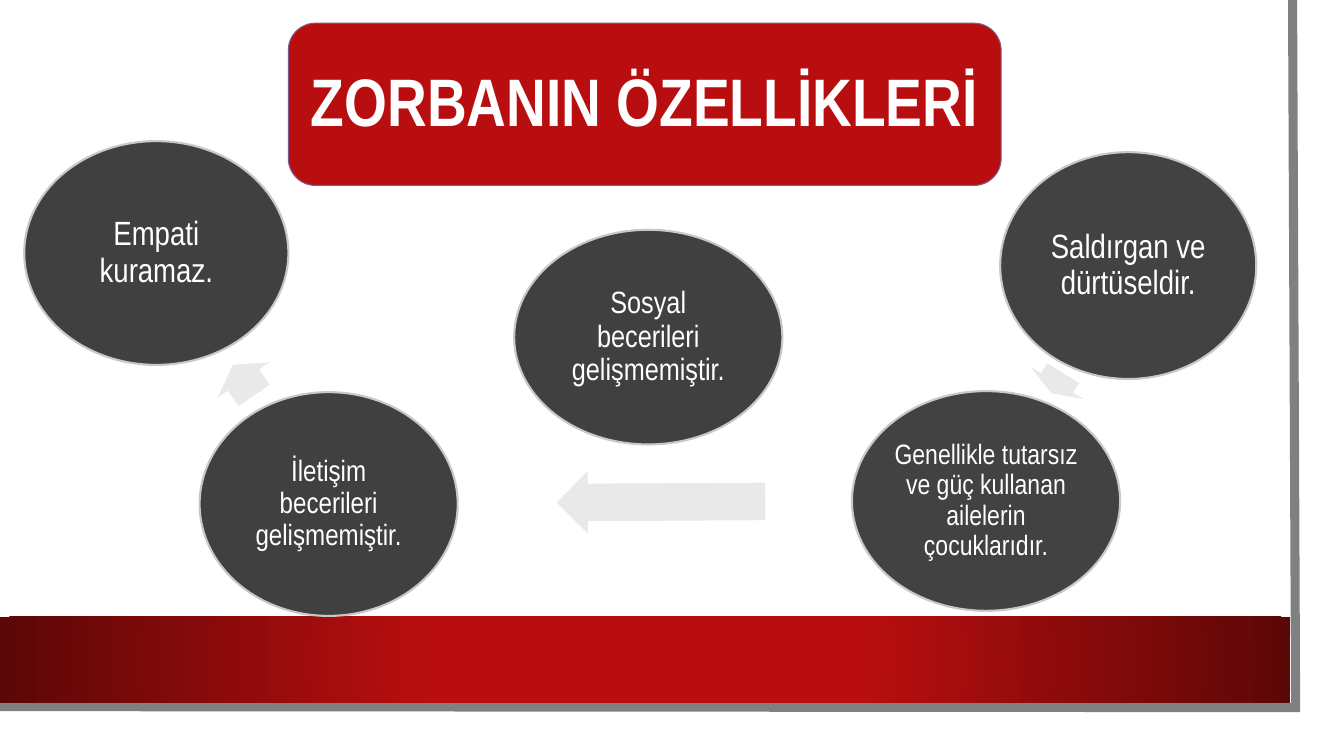
import pptx
import pptx.dml.color
import pptx.enum.shapes
import pptx.enum.text
import pptx.oxml
import pptx.oxml.ns
import pptx.util

Inches = pptx.util.Inches
Pt = pptx.util.Pt
SHAPE = pptx.enum.shapes.MSO_SHAPE

COLORS = {
    "red": "B80E0F",
    "dark_red": "5C0707",
    "title_line": "7C5E8F",
    "frame": "808080",
    "charcoal": "404040",
    "slate": "424242",
    "rim": "C8C8C8",
    "arrow": "E9E9E9",
    "white": "FFFFFF",
}

# text, size, fill, left, top, width, height
TRAITS = [
    ("Sosyal becerileri gelişmemiştir.", 22, "charcoal", 5.1, 2.28, 2.66, 2.13),
    ("Saldırgan ve dürtüseldir.", 24, "slate", 9.92, 1.51, 2.54, 2.25),
    ("Genellikle tutarsız ve güç kullanan ailelerin çocuklarıdır.", 20, "slate",
     8.45, 3.88, 2.66, 2.18),
    ("İletişim becerileri gelişmemiştir.", 21, "charcoal", 1.98, 3.89, 2.56, 2.22),
    ("Empati kuramaz.", 24, "charcoal", 0.24, 1.4, 2.62, 2.22),
]

# left, top, width, rotation
ARROWS = [
    (10.37, 3.49, 0.23, 121.2),
    (5.52, 4.67, 2.07, 179.7),
    (2.23, 3.46, 0.37, 235.5),
]
ARROW_HEIGHT = 0.62


class Slide:
    """Holds the style and the page being drawn."""

    font = "Arial Narrow"

    def __init__(self, page):
        self.page = page

    def color(self, name):
        return pptx.dml.color.RGBColor.from_string(COLORS[name])

    def shape(self, kind, place, fill, line=None, line_width=1.5):
        shape = self.page.shapes.add_shape(kind, *map(Inches, place))
        shape.shadow.inherit = False
        shape.fill.solid()
        shape.fill.fore_color.rgb = self.color(fill)
        if line:
            shape.line.color.rgb = self.color(line)
            shape.line.width = Pt(line_width)
        else:
            shape.line.fill.background()
        return shape

    def label(self, shape, text, size, inset, bold=False, wrap=True):
        box = shape.text_frame
        box.word_wrap = wrap
        box.vertical_anchor = pptx.enum.text.MSO_ANCHOR.MIDDLE
        box.margin_left = box.margin_right = Inches(inset)
        box.margin_top = box.margin_bottom = Inches(inset)
        para = box.paragraphs[0]
        para.alignment = pptx.enum.text.PP_ALIGN.CENTER
        para.line_spacing = 0.9
        span = para.add_run()
        span.text = text
        span.font.name = self.font
        span.font.size = Pt(size)
        span.font.bold = bold
        span.font.color.rgb = self.color("white")

    def frame(self, points, width):
        """Draw an open outline through the points."""
        corners = [(Inches(x), Inches(y)) for x, y in points]
        builder = self.page.shapes.build_freeform(*corners[0])
        builder.add_line_segments(corners[1:], close=False)
        outline = builder.convert_to_shape()
        outline.shadow.inherit = False
        outline.fill.background()
        outline.line.color.rgb = self.color("frame")
        outline.line.width = Pt(width)
        join = pptx.oxml.parse_xml(
            f'<a:miter {pptx.oxml.ns.nsdecls("a")} lim="800000"/>')
        fill = outline.line.fill._xPr.find(pptx.oxml.ns.qn("a:solidFill"))
        fill.addnext(join)

    def band(self, place):
        """Draw a bar that darkens from its centre outwards."""
        bar = self.shape(SHAPE.RECTANGLE, place, "red")
        gradient = pptx.oxml.parse_xml(
            f'<a:gradFill {pptx.oxml.ns.nsdecls("a")} rotWithShape="1"><a:gsLst>'
            f'<a:gs pos="34000"><a:srgbClr val="{COLORS["red"]}"/></a:gs>'
            f'<a:gs pos="100000"><a:srgbClr val="{COLORS["dark_red"]}"/></a:gs>'
            '</a:gsLst><a:path path="circle">'
            '<a:fillToRect l="50000" t="50000" r="50000" b="50000"/>'
            '</a:path></a:gradFill>')
        properties = bar._element.spPr
        solid = properties.find(pptx.oxml.ns.qn("a:solidFill"))
        properties.replace(solid, gradient)

    def trait(self, text, size, fill, *place):
        circle = self.shape(SHAPE.OVAL, place, fill, "rim")
        self.label(circle, text, size, 0.03)

    def arrow(self, left, top, width, rotation):
        place = (left, top, width, ARROW_HEIGHT)
        arrow = self.shape(SHAPE.RIGHT_ARROW, place, "arrow")
        arrow.adjustments[0] = 0.6
        arrow.adjustments[1] = 0.5
        arrow.rotation = rotation

    def title(self, text, place):
        plate = self.shape(SHAPE.ROUNDED_RECTANGLE, place, "red", "title_line", 0.75)
        self.label(plate, text, 48, 0.15, bold=True, wrap=False)


def main():
    deck = pptx.Presentation()
    deck.slide_width = Inches(13.33)
    deck.slide_height = Inches(7.5)
    slide = Slide(deck.slides.add_slide(deck.slide_layouts[6]))

    slide.frame([(12.82, 0), (12.85, 7.02), (-0.03, 7.01)], 6.5)
    slide.band((0, 6.12, 12.8, 0.85))
    for arrow in ARROWS:
        slide.arrow(*arrow)
    for trait in TRAITS:
        slide.trait(*trait)
    slide.title("ZORBANIN ÖZELLİKLERİ", (2.86, 0.23, 7.07, 1.61))

    deck.save("out.pptx")


if __name__ == "__main__":
    main()
